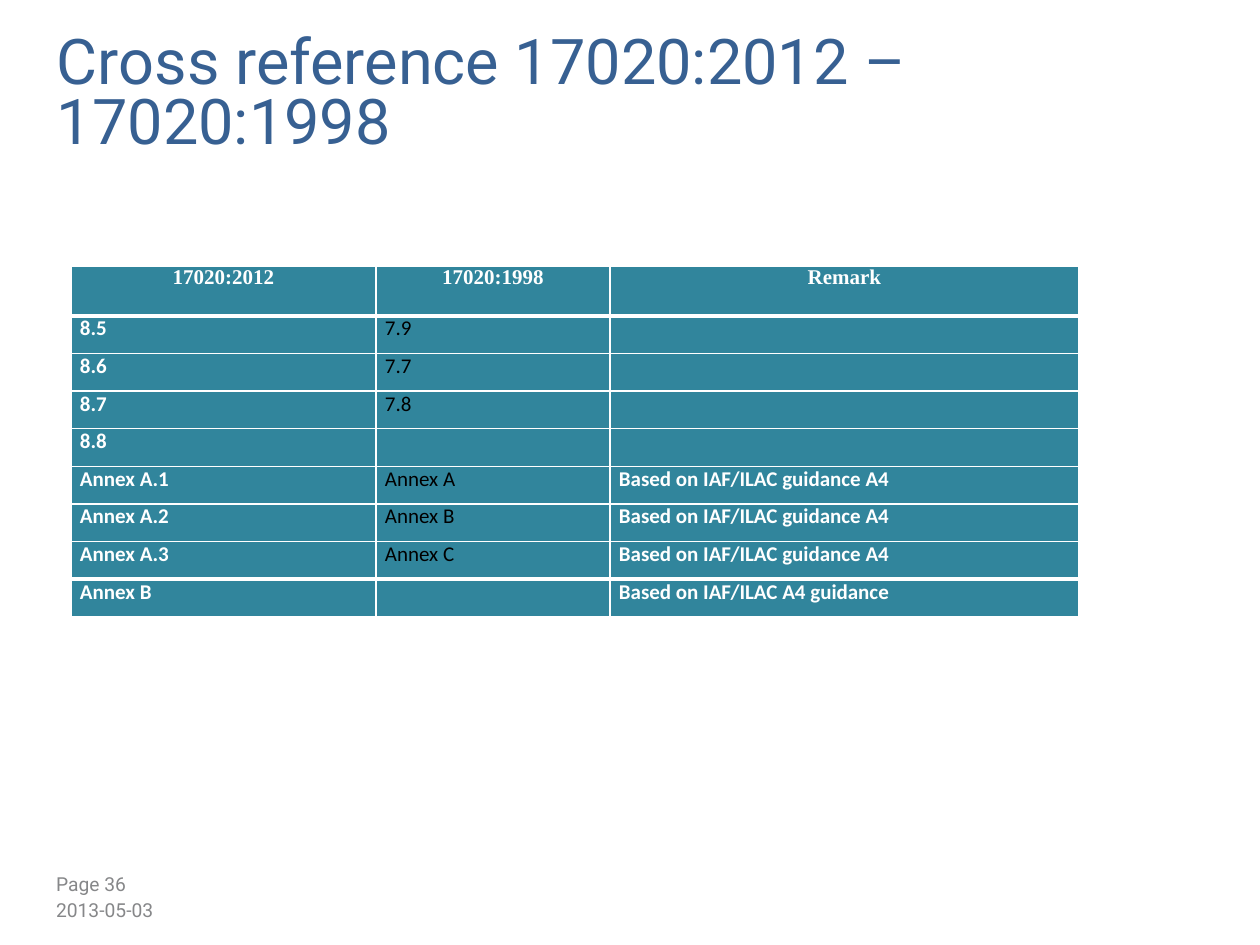
from lxml.etree import SubElement
from pptx import Presentation
from pptx.dml.color import RGBColor
from pptx.enum.text import PP_ALIGN
from pptx.oxml import parse_xml
from pptx.oxml.ns import nsdecls, qn
from pptx.util import Emu, Pt

PX_PER_INCH = 126
BLUE = RGBColor(0x37, 0x60, 0x92)
GREY = RGBColor(0x86, 0x87, 0x89)
TEAL = RGBColor(0x31, 0x85, 0x9C)
WHITE = RGBColor(0xFF, 0xFF, 0xFF)
BLACK = RGBColor(0, 0, 0)

THIN, THICK = 1, 3
COLUMN_WIDTHS = [305, 234, 469]
HEADER_HEIGHT, BODY_HEIGHT = 50, 301
GUIDANCE = "Based on IAF/ILAC guidance A4"
ROWS = [
    ("17020:2012", "17020:1998", "Remark"),
    ("8.5", "7.9", ""),
    ("8.6", "7.7", ""),
    ("8.7", "7.8", ""),
    ("8.8", "", ""),
    ("Annex A.1", "Annex A", GUIDANCE),
    ("Annex A.2", "Annex B", GUIDANCE),
    ("Annex A.3", "Annex C", GUIDANCE),
    ("Annex B", "", "Based on IAF/ILAC A4 guidance"),
]


def px(n):
    return Emu(round(n * 914400 / PX_PER_INCH))


def set_font(p, name, size, color, bold=False):
    p.font.name = name
    p.font.size = Pt(size)
    p.font.color.rgb = color
    p.font.bold = bold


def add_text(slide, box, text, size, color, line_spacing=None):
    tf = slide.shapes.add_textbox(*map(px, box)).text_frame
    tf.word_wrap = True
    tf.margin_left = tf.margin_top = tf.margin_right = tf.margin_bottom = 0
    p = tf.paragraphs[0]
    p.text = text
    set_font(p, "Roboto", size, color)
    if line_spacing:
        p.line_spacing = Pt(line_spacing)


def set_borders(cell, top, bottom):
    """Draw white cell borders; widths are in points."""
    sides = [("L", THIN), ("R", THIN), ("T", top), ("B", bottom)]
    tcPr = cell._tc.get_or_add_tcPr()
    for i, (side, width) in enumerate(sides):
        tcPr.insert(i, parse_xml(
            f'<a:ln{side} {nsdecls("a")} w="{Pt(width)}"><a:solidFill>'
            f'<a:srgbClr val="{WHITE}"/></a:solidFill></a:ln{side}>'))


def fill_cell(cell, text, is_header, is_old_clause):
    cell.fill.solid()
    cell.fill.fore_color.rgb = TEAL
    cell.margin_left = cell.margin_right = px(9)
    cell.margin_top = cell.margin_bottom = 0
    p = cell.text_frame.paragraphs[0]
    if is_header:
        p.alignment = PP_ALIGN.CENTER
    if text:
        p.text = text
        plain = is_old_clause and not is_header
        set_font(p, "Times New Roman" if is_header else "Calibri", 12,
                 BLACK if plain else WHITE, bold=not plain)
    else:
        # An empty cell takes its line height from the end-of-paragraph size
        SubElement(p._p, qn("a:endParaRPr")).set("sz", "1200")


def add_reference_table(slide):
    last = len(ROWS) - 1
    table = slide.shapes.add_table(
        len(ROWS), len(COLUMN_WIDTHS), px(71), px(266),
        px(sum(COLUMN_WIDTHS)), px(HEADER_HEIGHT + BODY_HEIGHT)).table
    for column, width in zip(table.columns, COLUMN_WIDTHS):
        column.width = px(width)
    for i, values in enumerate(ROWS):
        table.rows[i].height = px(BODY_HEIGHT / last if i else HEADER_HEIGHT)
        top = THICK if i in (1, last) else THIN
        bottom = THICK if i in (0, last - 1) else THIN
        for j, text in enumerate(values):
            cell = table.cell(i, j)
            fill_cell(cell, text, is_header=i == 0, is_old_clause=j == 1)
            set_borders(cell, top, bottom)


def main():
    prs = Presentation()
    prs.slide_width, prs.slide_height = px(1260), px(945)
    s = prs.slides.add_slide(prs.slide_layouts[6])
    add_text(s, (57, 38, 1140, 158), "Cross reference 17020:2012 – 17020:1998",
             36, BLUE, line_spacing=34)
    add_reference_table(s)
    add_text(s, (56, 872, 294, 50), "Page 36", 11, GREY)
    add_text(s, (56, 898, 775, 45), "2013-05-03", 11, GREY)
    prs.save("out.pptx")


if __name__ == "__main__":
    main()
